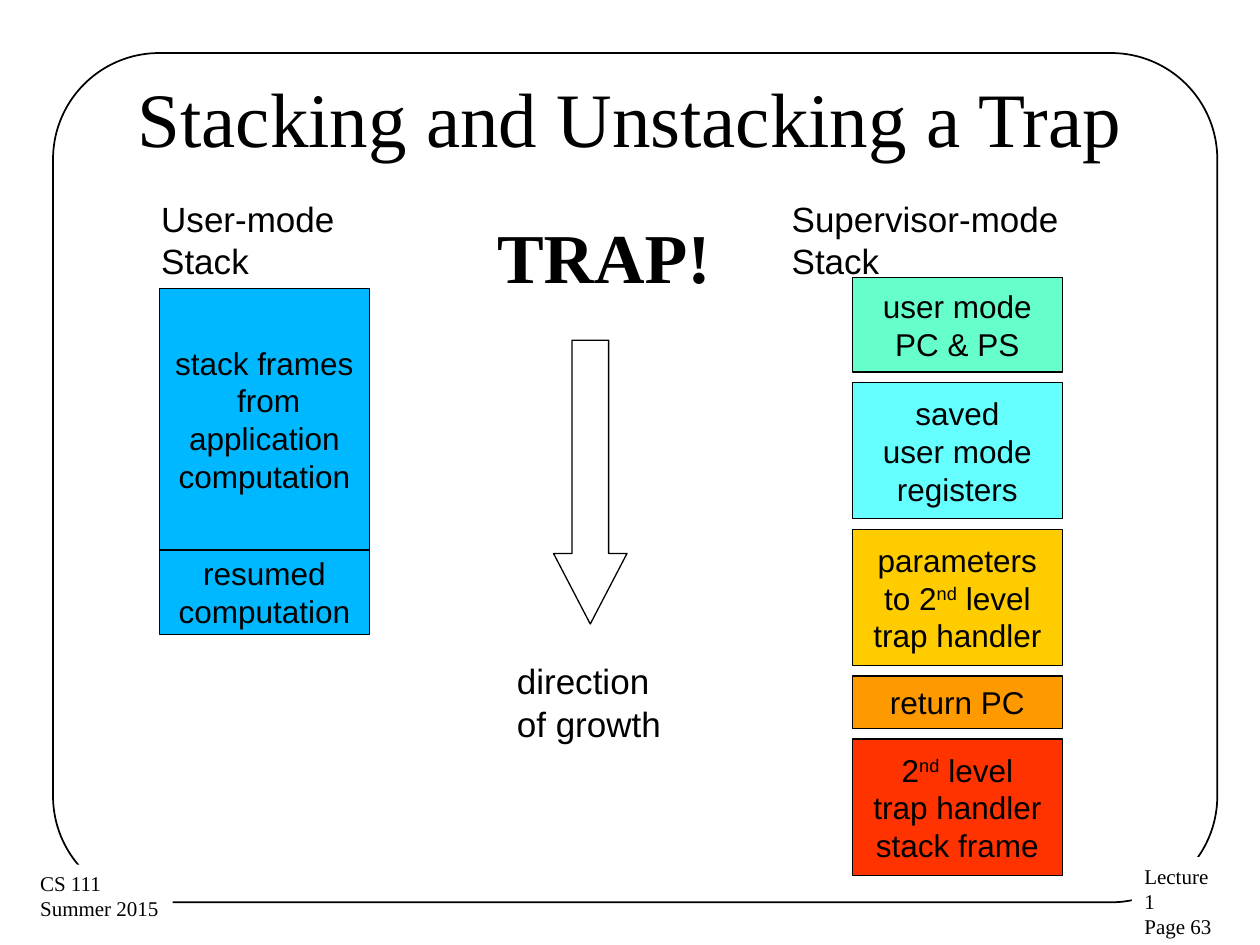
from pptx import Presentation
from pptx.util import Cm, Pt
from pptx.dml.color import RGBColor as Rgb
from pptx.enum.shapes import MSO_SHAPE as Shape
from pptx.enum.text import MSO_ANCHOR as Anchor, PP_ALIGN as Align

theme = {
    "ink": "000000", "paper": "FFFFFF", "user": "00B8FF",
    "state": "66FFCC", "regs": "66FFFF", "args": "FFCC00",
    "back": "FF9900", "frame": "FF3300",
    "serif": "Times New Roman", "sans": "Arial",
    "title": 44, "shout": 40, "label": 20, "cell": 18, "foot": 12,
}


def write(frame, lines, size, face, align=Align.LEFT, anchor=Anchor.TOP, wrap=True, bold=False):
    for name, val in {"word_wrap": wrap, "vertical_anchor": anchor}.items():
        setattr(frame, name, val)
    for i, line in enumerate(lines):
        para = frame.paragraphs[0] if i == 0 else frame.add_paragraph()
        para.alignment = align
        for k, row in enumerate(line.split("\n")):
            if k:
                para.add_line_break()
            for j, part in enumerate(row.split("^")):
                run = para.add_run()
                run.text = part
                look = {"size": Pt(theme[size]), "name": theme[face], "bold": bold}
                for name, val in look.items():
                    setattr(run.font, name, val)
                run.font.color.rgb = Rgb.from_string(theme["ink"])
                if j % 2:
                    run._r.get_or_add_rPr().set("baseline", "30000")


def draw(kind, box, fill=None, line=None):
    item = slide.shapes.add_shape(kind, *map(Cm, box))
    item.shadow.inherit = False
    if fill:
        item.fill.solid()
        item.fill.fore_color.rgb = Rgb.from_string(theme[fill])
    else:
        item.fill.background()
    if line:
        item.line.color.rgb = Rgb.from_string(theme["ink"])
        item.line.width = Pt(line)
    else:
        item.line.fill.background()
    return item


deck = Presentation()
deck.slide_width, deck.slide_height = Cm(25.4), Cm(19.05)
slide = deck.slides.add_slide(deck.slide_layouts[5])

border = draw(Shape.ROUNDED_RECTANGLE, (1.07, 1.07, 23.47, 17.12), line=1)
border.adjustments[0] = 0.125

feet = [
    ((22.82, 17.28, 2.08, 1.27), ["Lecture 1", "Page 63"]),
    ((0.56, 17.43, 2.92, 1.3), ["CS 111", "Summer 2015"]),
]
for box, lines in feet:
    foot = draw(Shape.RECTANGLE, box, "paper")
    write(foot.text_frame, lines, "foot", "serif")

title = slide.shapes.title
place = {"left": 1.27, "top": 0.76, "width": 22.86, "height": 3.18}
for name, val in place.items():
    setattr(title, name, Cm(val))
write(title.text_frame, ["Stacking and Unstacking a Trap"], "title", "serif",
      Align.CENTER, Anchor.MIDDLE)

labels = [
    ((3, 3.86, 5.97, 1.09), ["User-mode\nStack"], "label", "sans", False),
    ((15.71, 3.86, 7.85, 1.09), ["Supervisor-mode\nStack"], "label", "sans", False),
    ((10.17, 13.18, 3.5, 1.96), ["direction", "of growth"], "label", "sans", False),
    ((9.77, 4.17, 4.88, 1.96), ["TRAP!"], "shout", "serif", True),
]
for box, lines, size, face, bold in labels:
    text = slide.shapes.add_textbox(*map(Cm, box))
    write(text.text_frame, lines, size, face, bold=bold)

arrow = draw(Shape.DOWN_ARROW, (11.16, 6.86, 1.48, 5.72), line=0.75)
arrow.adjustments[0], arrow.adjustments[1] = 0.5, 0.96

stacks = [
    (3.21, 5.81, 0, [
        (5.28, "user", ["stack frames", " from", "application", "computation"]),
        (1.7, "user", ["resumed", "computation"]),
    ]),
    (17.18, 5.6, 0.21, [
        (1.9, "state", ["user mode", "PC & PS"]),
        (2.75, "regs", ["saved", "user mode", "registers"]),
        (2.75, "args", ["parameters", "to 2^nd^ level", "trap handler"]),
        (1.06, "back", ["return PC"]),
        (2.75, "frame", ["2^nd^ level", "trap handler", "stack frame"]),
    ]),
]
for left, top, gap, cells in stacks:
    for high, fill, lines in cells:
        cell = draw(Shape.RECTANGLE, (left, top, 4.24, high), fill, 0.75)
        write(cell.text_frame, lines, "cell", "sans", Align.CENTER, Anchor.MIDDLE, False)
        top += high + gap

deck.save("out.pptx")
